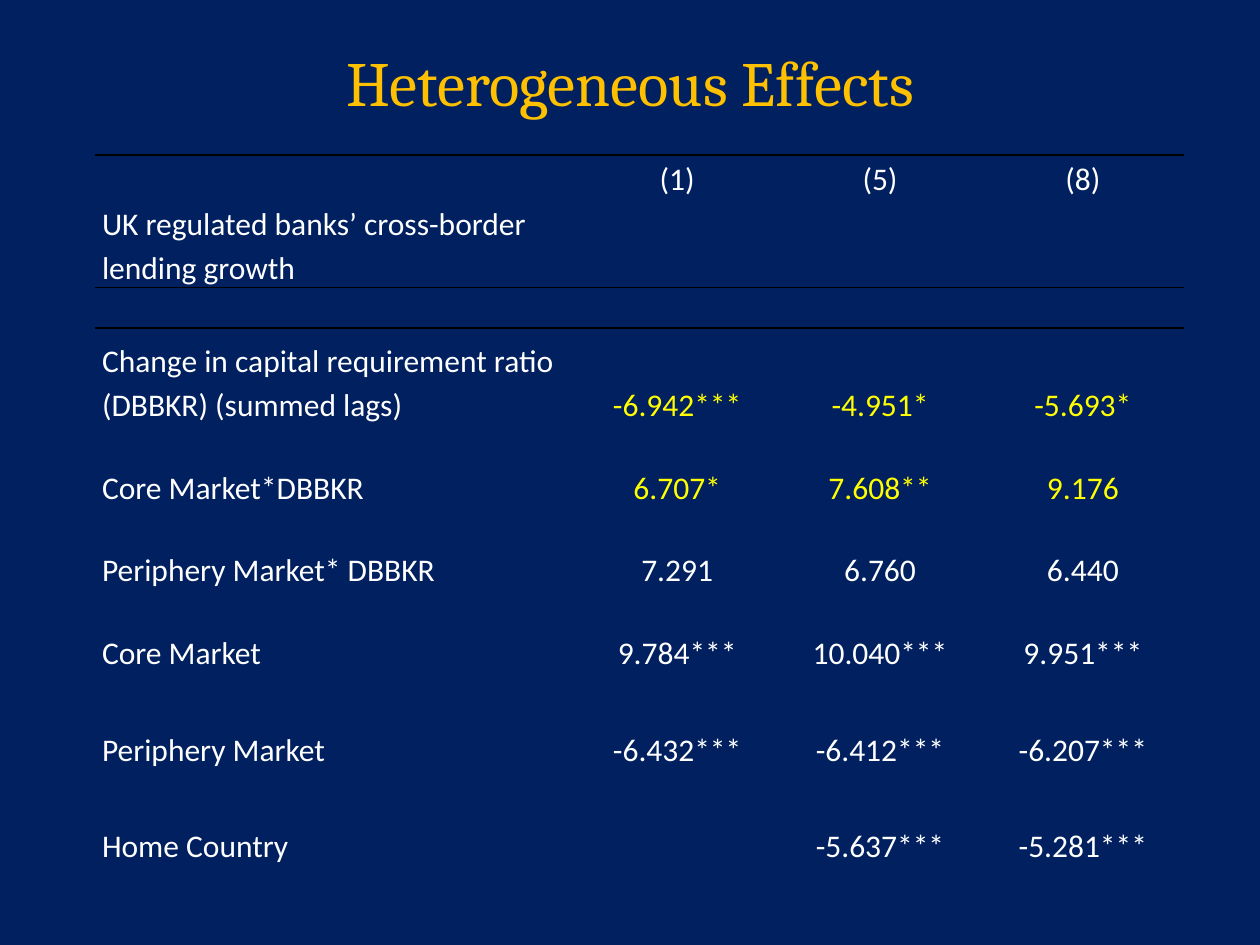
import pptx
import pptx.util
import pptx.dml.color
import pptx.enum.text
import pptx.oxml
import pptx.oxml.ns

Inches = pptx.util.Inches
ALIGN = pptx.enum.text.PP_ALIGN
ANCHOR = pptx.enum.text.MSO_ANCHOR
NO_STYLE = "{2D5ABB26-0587-4C30-8999-92F81FD0307C}"
WHITE, YELLOW, GOLD, NAVY, BLACK = "FFFFFF", "FFFF00", "FFC000", "002060", "000000"


def color(value):
    return pptx.dml.color.RGBColor.from_string(value)


class Deck:
    body_font = "Calibri"
    title_font = "Cambria"

    def __init__(self, prs):
        self.s = prs.slides.add_slide(prs.slide_layouts[5])
        fill = self.s.background.fill
        fill.solid()
        fill.fore_color.rgb = color(NAVY)

    def format(self, p, font, size, rgb, align):
        p.alignment = align
        for r in p.runs:
            r.font.name = font
            r.font.size = pptx.util.Pt(size)
            r.font.color.rgb = color(rgb)

    def title(self, text, left, top, width, height):
        sp = self.s.shapes.title
        sp.left, sp.top = Inches(left), Inches(top)
        sp.width, sp.height = Inches(width), Inches(height)
        tf = sp.text_frame
        tf.text = text
        tf.vertical_anchor = ANCHOR.MIDDLE
        self.format(tf.paragraphs[0], self.title_font, 36, GOLD, ALIGN.CENTER)

    def cell(self, cell, text, rgb, align):
        cell.fill.background()
        cell.vertical_anchor = ANCHOR.BOTTOM
        cell.margin_left = cell.margin_right = Inches(0.06)
        cell.margin_top = cell.margin_bottom = 0
        if text:
            p = cell.text_frame.paragraphs[0]
            p.text = text
            p.line_spacing = 1.15
            self.format(p, self.body_font, 18, rgb, align)

    def border(self, cell, side):
        ns = pptx.oxml.ns.nsdecls("a")
        line = pptx.oxml.parse_xml(
            f'<a:{side} {ns} w="12700"><a:solidFill><a:srgbClr val="{BLACK}"/>'
            f'</a:solidFill></a:{side}>')
        cell._tc.get_or_add_tcPr().insert(0, line)

    def table(self, rows, left, top, widths, heights, highlighted, borders):
        frame = self.s.shapes.add_table(
            len(rows), len(widths), Inches(left), Inches(top),
            Inches(sum(widths)), Inches(sum(heights)))
        table = frame.table
        table.first_row = table.horz_banding = False
        table._tbl.tblPr[0].text = NO_STYLE
        for column, width in zip(table.columns, widths):
            column.width = Inches(width)
        for i, (values, height) in enumerate(zip(rows, heights)):
            table.rows[i].height = Inches(height)
            for j in range(len(widths)):
                text = values[j] if j < len(values) else ""
                rgb = YELLOW if j and i in highlighted else WHITE
                cell = table.cell(i, j)
                self.cell(cell, text, rgb, ALIGN.CENTER if j else ALIGN.LEFT)
                if i in borders:
                    self.border(cell, borders[i])


def main():
    prs = pptx.Presentation()
    prs.slide_width, prs.slide_height = Inches(10), Inches(7.5)
    deck = Deck(prs)
    deck.title("Heterogeneous Effects", 0.5, 0.3, 9, 0.69)

    results = [
        ("Change in capital requirement ratio (DBBKR) (summed lags)",
         "-6.942***", "-4.951*", "-5.693*"),
        ("Core Market*DBBKR", "6.707*", "7.608**", "9.176"),
        ("Periphery Market* DBBKR", "7.291", "6.760", "6.440"),
        ("Core Market", "9.784***", "10.040***", "9.951***"),
        ("Periphery Market", "-6.432***", "-6.412***", "-6.207***"),
        ("Home Country", "", "-5.637***", "-5.281***"),
    ]
    rows = [("", "(1)", "(5)", "(8)"),
            ("UK regulated banks’ cross-border lending growth",)]
    for result in results:
        rows += [(), result]
    heights = [0.34, 0.65, 0.32, 0.77]
    for height in (0.32, 0.32, 0.32, 0.46, 0.46):
        heights += [0.29, height]
    deck.table(rows, 0.75, 1.23, [3.82] + [1.61] * 3, heights,
               highlighted=(3, 5), borders={0: "lnT", 1: "lnB", 2: "lnT"})
    prs.save("out.pptx")


if __name__ == "__main__":
    main()
